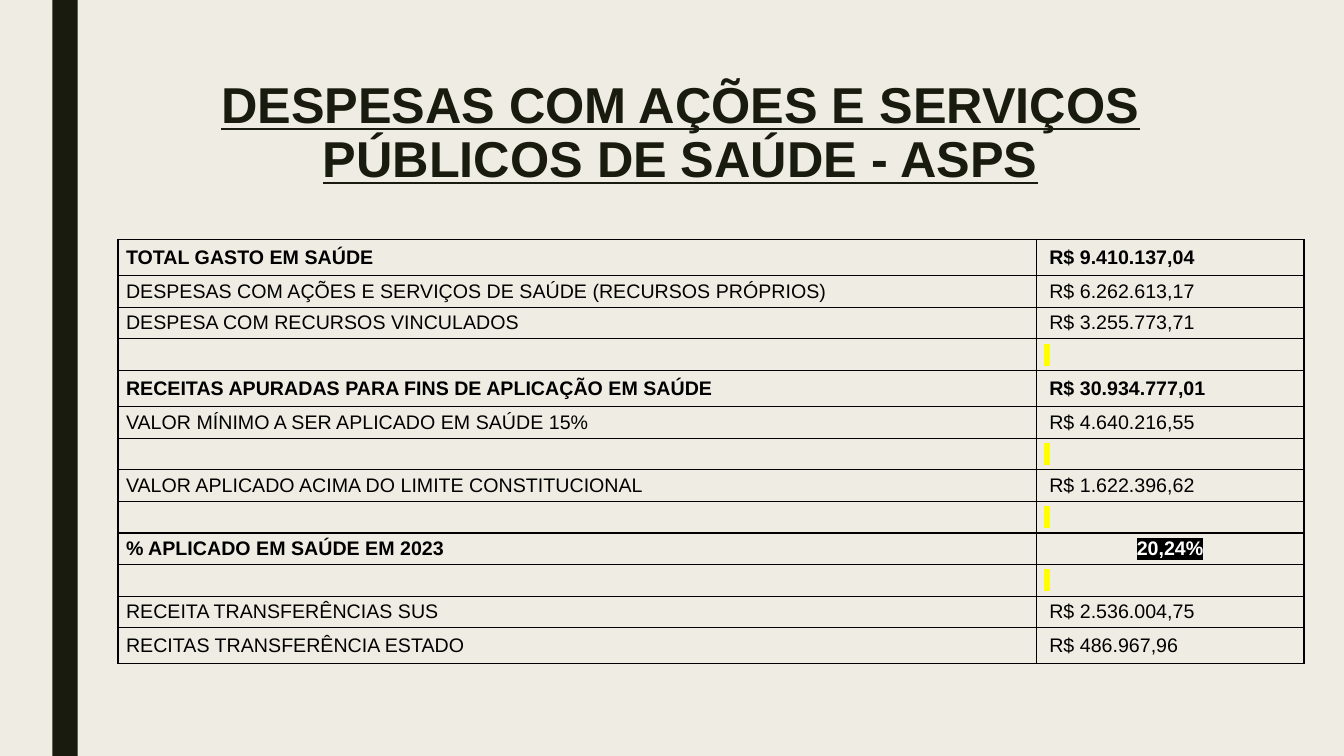
from lxml import etree
from pptx import Presentation
from pptx.dml.color import RGBColor
from pptx.enum.shapes import MSO_SHAPE
from pptx.enum.text import MSO_ANCHOR, PP_ALIGN
from pptx.oxml.ns import qn
from pptx.util import Inches, Pt

RECT = MSO_SHAPE.RECTANGLE
LEFT, CENTER = PP_ALIGN.LEFT, PP_ALIGN.CENTER
TOP, MIDDLE = MSO_ANCHOR.TOP, MSO_ANCHOR.MIDDLE

COLUMNS, ROWS = 80, 45
BLANK_LAYOUT = 6
TALL, SHORT = 2.15, 1.86
COLUMN_WIDTHS = (54.66, 15.94)

BOLD = {"bold": True}
MARKED = {"highlight": "FFFF00"}
RATE = {"bold": True, "color": "FFFFFF", "highlight": "000000", "align": CENTER}

EXPENSES = [
    ("TOTAL GASTO EM SAÚDE", "R$ 9.410.137,04", TALL, BOLD, BOLD),
    ("DESPESAS COM AÇÕES E SERVIÇOS DE SAÚDE (RECURSOS PRÓPRIOS)", "R$ 6.262.613,17", SHORT, {}, {}),
    ("DESPESA COM RECURSOS VINCULADOS", "R$ 3.255.773,71", SHORT, {}, {}),
    ("", " ", SHORT, {}, MARKED),
    ("RECEITAS APURADAS PARA FINS DE APLICAÇÃO EM SAÚDE", "R$ 30.934.777,01", TALL, BOLD, BOLD),
    ("VALOR MÍNIMO A SER APLICADO EM SAÚDE 15%", "R$ 4.640.216,55", SHORT, {}, {}),
    ("", " ", SHORT, {}, MARKED),
    ("VALOR APLICADO ACIMA DO LIMITE CONSTITUCIONAL", "R$ 1.622.396,62", SHORT, {}, {}),
    ("", " ", SHORT, {}, MARKED),
    ("% APLICADO EM SAÚDE EM 2023", "20,24%", SHORT, BOLD, RATE),
    ("", " ", SHORT, {}, MARKED),
    ("RECEITA TRANSFERÊNCIAS SUS", "R$ 2.536.004,75", SHORT, {}, {}),
    ("RECITAS TRANSFERÊNCIA ESTADO", "R$ 486.967,96", TALL, {}, {}),
]


def rgb(value):
    return RGBColor.from_string(value)


def write(tf, text, size=14, color="000000", bold=False, underline=False,
          align=LEFT, spacing=None, highlight=None):
    p = tf.paragraphs[0]
    p.alignment = align
    p.line_spacing = spacing
    if not text:
        etree.SubElement(p._p, qn("a:endParaRPr"), sz=str(size * 100))
        return
    r = p.add_run()
    r.text = text
    r.font.name = "Arial"
    r.font.size = Pt(size)
    r.font.bold = bold
    r.font.underline = underline
    r.font.color.rgb = rgb(color)
    if highlight:
        mark = etree.Element(qn("a:highlight"))
        etree.SubElement(mark, qn("a:srgbClr"), val=highlight)
        r._r.rPr.find(qn("a:solidFill")).addnext(mark)


class Deck:
    ink = "191B0E"
    paper = "EFEDE3"
    border = "000000"

    def __init__(self):
        self.prs = Presentation()
        self.prs.slide_width = Inches(13.333)
        self.prs.slide_height = Inches(7.5)
        self.s = self.prs.slides.add_slide(self.prs.slide_layouts[BLANK_LAYOUT])
        self.s.background.fill.solid()
        self.s.background.fill.fore_color.rgb = rgb(self.paper)

    def x(self, columns):
        return round(self.prs.slide_width * columns / COLUMNS)

    def y(self, rows):
        return round(self.prs.slide_height * rows / ROWS)

    def box(self, left, top, width, height):
        return self.x(left), self.y(top), self.x(width), self.y(height)

    def bar(self, *at):
        sp = self.s.shapes.add_shape(RECT, *self.box(*at))
        sp.shadow.inherit = False
        sp.fill.solid()
        sp.fill.fore_color.rgb = rgb(self.ink)
        sp.line.fill.background()

    def title(self, text, *at):
        tf = self.s.shapes.add_textbox(*self.box(*at)).text_frame
        tf.word_wrap = True
        tf.vertical_anchor = TOP
        write(tf, text, size=36, color=self.ink, bold=True, underline=True,
              align=CENTER, spacing=0.89)

    def outline(self, cell):
        tc_pr = cell._tc.get_or_add_tcPr()
        for i, side in enumerate(("lnL", "lnR", "lnT", "lnB")):
            ln = etree.Element(qn(f"a:{side}"), w=str(Pt(1)))
            fill = etree.SubElement(ln, qn("a:solidFill"))
            etree.SubElement(fill, qn("a:srgbClr"), val=self.border)
            tc_pr.insert(i, ln)

    def cell(self, cell, text, indent, style):
        cell.fill.background()
        cell.vertical_anchor = MIDDLE
        cell.margin_left = Inches(indent)
        cell.margin_right = Inches(0.08)
        cell.margin_top = cell.margin_bottom = Inches(0.04)
        self.outline(cell)
        write(cell.text_frame, text, **style)

    def table(self, left, top, widths, data):
        height = sum(row[2] for row in data)
        at = self.box(left, top, sum(widths), height)
        table = self.s.shapes.add_table(len(data), len(widths), *at).table
        table.first_row = table.horz_banding = False
        for column, width in zip(table.columns, widths):
            column.width = self.x(width)
        for i, (label, value, height, label_style, value_style) in enumerate(data):
            table.rows[i].height = self.y(height)
            indent = 0.13 if value.startswith("R$") else 0.08
            self.cell(table.cell(i, 0), label, 0.08, label_style)
            self.cell(table.cell(i, 1), value, indent, value_style)


def main():
    deck = Deck()
    deck.bar(3.12, 0, 1.5, ROWS)
    deck.title("DESPESAS COM AÇÕES E SERVIÇOS PÚBLICOS DE SAÚDE - ASPS", 9, 4.5, 63, 9.72)
    deck.table(7.02, 14.26, COLUMN_WIDTHS, EXPENSES)
    deck.prs.save("out.pptx")


if __name__ == "__main__":
    main()
